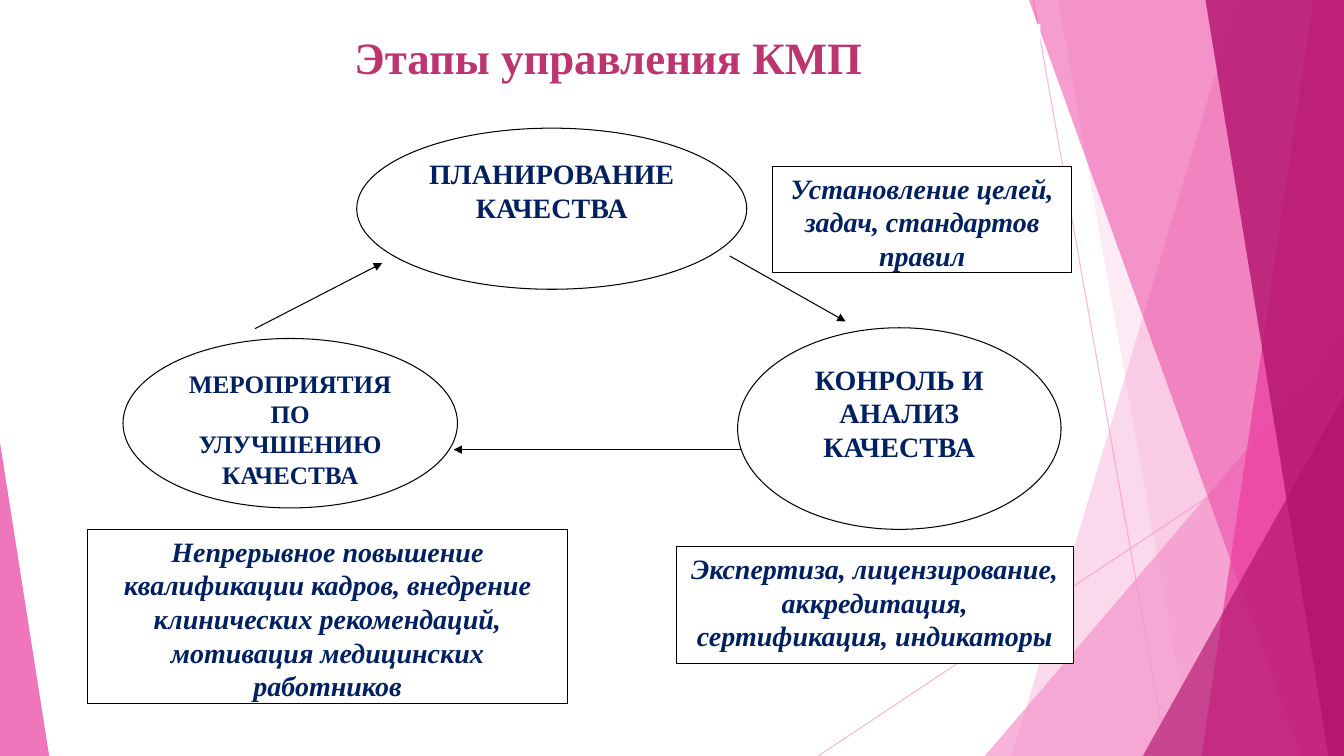
import pptx
import pptx.util
import pptx.oxml
import pptx.oxml.ns
from pptx.dml.color import RGBColor
from pptx.enum.shapes import MSO_CONNECTOR, MSO_SHAPE
from pptx.enum.text import MSO_ANCHOR, PP_ALIGN
from pptx.util import Cm, Pt

WHITE = RGBColor(0xFF, 0xFF, 0xFF)
BLACK = RGBColor(0, 0, 0)
NAVY = RGBColor(0x00, 0x20, 0x60)
TITLE_PINK = RGBColor(0xBC, 0x35, 0x6F)
LIGHT_PINK = RGBColor(0xF4, 0x96, 0xCB)
PINK = RGBColor(0xEB, 0x3D, 0x9F)
CRIMSON = RGBColor(0xB2, 0x13, 0x6D)
FONT = "Times New Roman"
WIDTH, HEIGHT = 33.87, 19.05

deck = pptx.Presentation()
deck.slide_width, deck.slide_height = Cm(WIDTH), Cm(HEIGHT)
slide = deck.slides.add_slide(deck.slide_layouts[6])
shapes = slide.shapes


def add_line(start, end, color, extra):
    """Draw a thin line; extra is the tag and attributes of one XML setting."""
    line = shapes.add_connector(
        MSO_CONNECTOR.STRAIGHT, *(Cm(value) for value in start + end))
    line.line.color.rgb = color
    line.line.width = Pt(0.75)
    tag, attribute, value = extra
    outline = line.line._ln
    parent = outline.find(".//" + pptx.oxml.ns.qn("a:srgbClr")) if tag == "a:alpha" else outline
    setting = pptx.oxml.parse_xml(f"<{tag} {pptx.oxml.ns.nsdecls('a')}/>")
    setting.set(attribute, value)
    parent.append(setting)
    line._element.spPr.append(
        pptx.oxml.parse_xml(f"<a:effectLst {pptx.oxml.ns.nsdecls('a')}/>"))


def add_text(shape, text, size, color, italic=False):
    paragraph = shape.text_frame.paragraphs[0]
    paragraph.alignment = PP_ALIGN.CENTER
    run = paragraph.add_run()
    run.text = text
    run.font.name, run.font.size = FONT, Pt(size)
    run.font.bold, run.font.italic = True, italic
    run.font.color.rgb = color


# Decorative background rays
for start, end in [((26.04, 0), (29.41, HEIGHT)), ((WIDTH, 10.24), (20.62, HEIGHT))]:
    add_line(start, end, LIGHT_PINK, ("a:alpha", "val", "70000"))

# Bands hold the top and bottom x of their left edge;
# triangles hold left, top, width, height and apex position
facets = [
    (LIGHT_PINK, 36, (31.19, 25.5)),
    (LIGHT_PINK, 20, (26.67, 30.05)),
    (LIGHT_PINK, 72, (24.82, 8.46, 9.05, 10.59, 1)),
    (PINK, 50, (25.93, 32.79)),
    (PINK, 70, (33.1, 30.28)),
    (CRIMSON, 80, (30.38, 33.48)),
    (CRIMSON, 66, (28.8, 9.98, 5.07, 9.07, 1)),
    (PINK, 70, (0, 11.15, 1.24, 7.9, 0)),
]
for color, opacity, geometry in facets:
    if len(geometry) == 2:
        top_x, bottom_x = geometry
        outline = shapes.build_freeform(Cm(top_x), 0)
        outline.add_line_segments([
            (Cm(WIDTH), 0), (Cm(WIDTH), Cm(HEIGHT)), (Cm(bottom_x), Cm(HEIGHT))])
        facet = outline.convert_to_shape()
    else:
        *box, apex = geometry
        facet = shapes.add_shape(MSO_SHAPE.ISOSCELES_TRIANGLE, *(Cm(value) for value in box))
        facet.adjustments[0] = apex
    facet.shadow.inherit = False
    facet.line.fill.background()
    facet.fill.solid()
    facet.fill.fore_color.rgb = color
    alpha = pptx.oxml.parse_xml(
        f"<a:alpha {pptx.oxml.ns.nsdecls('a')} val='{opacity * 1000}'/>")
    facet._element.spPr.find(".//" + pptx.oxml.ns.qn("a:srgbClr")).append(alpha)

# Arrows of the cycle, under the stages
for start, end in [
    ((18.39, 6.45), (21.31, 8.1)),
    ((18.67, 11.33), (11.43, 11.33)),
    ((6.43, 8.28), (9.63, 6.63)),
]:
    add_line(start, end, BLACK, ("a:tailEnd", "type", "triangle"))

# Stages are ellipses, their explanations are boxes in italics
stages = [
    (MSO_SHAPE.OVAL, (8.99, 3.23, 9.83, 4.06), 20, "ПЛАНИРОВАНИЕ КАЧЕСТВА"),
    (MSO_SHAPE.OVAL, (18.59, 8.26, 8.15, 5.08), 20, "КОНРОЛЬ И АНАЛИЗ КАЧЕСТВА"),
    (MSO_SHAPE.RECTANGLE, (19.48, 4.19, 7.52, 2.67), 20,
     "Установление целей, задач, стандартов правил"),
    (MSO_SHAPE.OVAL, (3.1, 8.53, 8.43, 4.27), 18, "МЕРОПРИЯТИЯ ПО УЛУЧШЕНИЮ КАЧЕСТВА"),
    (MSO_SHAPE.RECTANGLE, (17.04, 13.77, 10.01, 2.95), 20,
     "Экспертиза, лицензирование, аккредитация, сертификация, индикаторы"),
    (MSO_SHAPE.RECTANGLE, (2.21, 13.34, 12.09, 4.39), 20,
     "Непрерывное повышение квалификации кадров, внедрение клинических "
     "рекомендаций, мотивация медицинских работников"),
]
for kind, box, size, text in stages:
    stage = shapes.add_shape(kind, *(Cm(value) for value in box))
    stage.shadow.inherit = False
    stage.fill.solid()
    stage.fill.fore_color.rgb = WHITE
    stage.line.color.rgb = BLACK
    stage.line.width = Pt(0.75)
    stage.text_frame.word_wrap = True
    stage.text_frame.vertical_anchor = MSO_ANCHOR.TOP
    add_text(stage, text, size, NAVY, italic=kind == MSO_SHAPE.RECTANGLE)
    stage.text_frame.paragraphs[0].space_after = Pt(10)

title = shapes.add_textbox(Cm(4.45), Cm(0.61), Cm(21.77), Cm(1.63))
title.fill.solid()
title.fill.fore_color.rgb = WHITE
title.text_frame.word_wrap = True
title.text_frame.vertical_anchor = MSO_ANCHOR.MIDDLE
add_text(title, "Этапы управления КМП", 32, TITLE_PINK)

deck.save("out.pptx")
